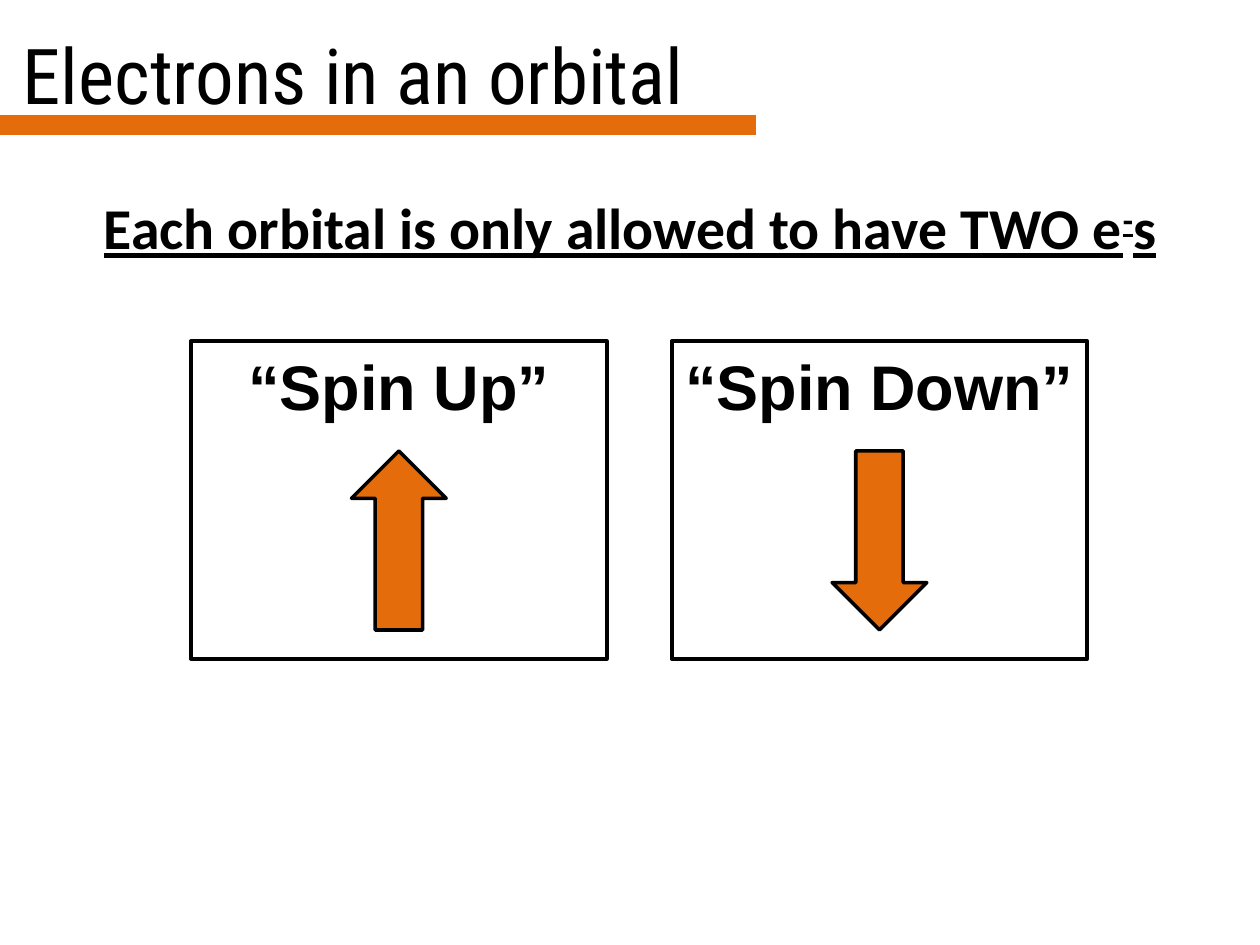
from lxml.etree import SubElement
from pptx import Presentation
from pptx.dml.color import RGBColor
from pptx.enum.shapes import MSO_CONNECTOR, MSO_SHAPE
from pptx.enum.text import MSO_ANCHOR, MSO_AUTO_SIZE, PP_ALIGN
from pptx.oxml.ns import qn
from pptx.util import Cm, Pt

TITLE = "Electrons in an orbital"
RULE = [("Each orbital is only allowed to have TWO e", 0), ("-", 30000), ("s", 0)]
SPINS = [("“Spin Up”", 180), ("“Spin Down”", 0)]
COLORS = {"ink": "000000", "accent": "E46C0A"}

CARD_LEFT, CARD_TOP, CARD_PITCH = 3.85, 6.88, 9.69
CARD_WIDTH, CARD_HEIGHT = 8.38, 6.4
ARROW_WIDTH, ARROW_HEIGHT, ARROW_DROP = 1.91, 3.61, 2.21


def color(name):
    return RGBColor.from_string(COLORS[name])


def place(part, left, top, width, height):
    part.left, part.top = Cm(left), Cm(top)
    part.width, part.height = Cm(width), Cm(height)


def style(paragraph, face, size, align, bold=False):
    paragraph.alignment = align
    paragraph.font.name = face
    paragraph.font.size = Pt(size)
    paragraph.font.bold = bold
    paragraph.font.color.rgb = color("ink")


def add_outlined(slide, kind, left, top, width, height, weight, fill=None):
    outlined = slide.shapes.add_shape(kind, Cm(left), Cm(top), Cm(width), Cm(height))
    outlined.shadow.inherit = False
    if fill:
        outlined.fill.solid()
        outlined.fill.fore_color.rgb = color(fill)
    else:
        outlined.fill.background()
    outlined.line.color.rgb = color("ink")
    outlined.line.width = Pt(weight)
    return outlined


def add_title(slide):
    title = slide.shapes.title
    place(title, 0.2, 0.43, 15.67, 2.11)
    title.text_frame.text = TITLE
    title.text_frame.auto_size = MSO_AUTO_SIZE.NONE
    title.text_frame.vertical_anchor = MSO_ANCHOR.MIDDLE
    style(title.text_frame.paragraphs[0], "Roboto Condensed", 44, PP_ALIGN.LEFT)

    underline = slide.shapes.add_connector(
        MSO_CONNECTOR.STRAIGHT, Cm(0), Cm(2.52), Cm(15.24), Cm(2.52))
    underline.line.color.rgb = color("accent")
    underline.line.width = Pt(11)
    SubElement(underline._element.spPr, qn("a:effectLst"))


def add_rule(slide):
    body = slide.placeholders[1]
    place(body, 0.42, 2.34, 24.56, 12.57)
    frame = body.text_frame
    frame.auto_size = MSO_AUTO_SIZE.NONE
    frame.margin_top = Cm(1.8)
    rule = frame.paragraphs[0]
    style(rule, "Calibri", 33, PP_ALIGN.CENTER, bold=True)
    rule.font.underline = True
    rule.line_spacing = 0.8
    rule.space_before = Pt(0)
    properties = rule._p.get_or_add_pPr()
    properties.set("marL", "0")
    properties.set("indent", "0")
    properties.insert_element_before(
        properties.makeelement(qn("a:buNone")), "a:tabLst", "a:defRPr", "a:extLst")
    for words, baseline in RULE:
        run = rule.add_run()
        run.text = words
        run.font.size = Pt(33)
        run.font.bold = run.font.underline = True
        if baseline:
            run.font._element.set("baseline", str(baseline))


def add_spin(slide, index, label, rotation):
    left = CARD_LEFT + index * CARD_PITCH
    card = add_outlined(slide, MSO_SHAPE.RECTANGLE, left, CARD_TOP,
                        CARD_WIDTH, CARD_HEIGHT, 2.25)
    card.text_frame.text = label
    card.text_frame.vertical_anchor = MSO_ANCHOR.TOP
    style(card.text_frame.paragraphs[0], "Arial", 36, PP_ALIGN.CENTER, bold=True)
    arrow = add_outlined(slide, MSO_SHAPE.DOWN_ARROW,
                         left + (CARD_WIDTH - ARROW_WIDTH) / 2, CARD_TOP + ARROW_DROP,
                         ARROW_WIDTH, ARROW_HEIGHT, 2, "accent")
    arrow.rotation = rotation


def main():
    deck = Presentation()
    deck.slide_width, deck.slide_height = Cm(25.4), Cm(19.05)
    slide = deck.slides.add_slide(deck.slide_layouts[1])
    add_title(slide)
    add_rule(slide)
    for index, (label, rotation) in enumerate(SPINS):
        add_spin(slide, index, label, rotation)
    deck.save("out.pptx")


if __name__ == "__main__":
    main()
